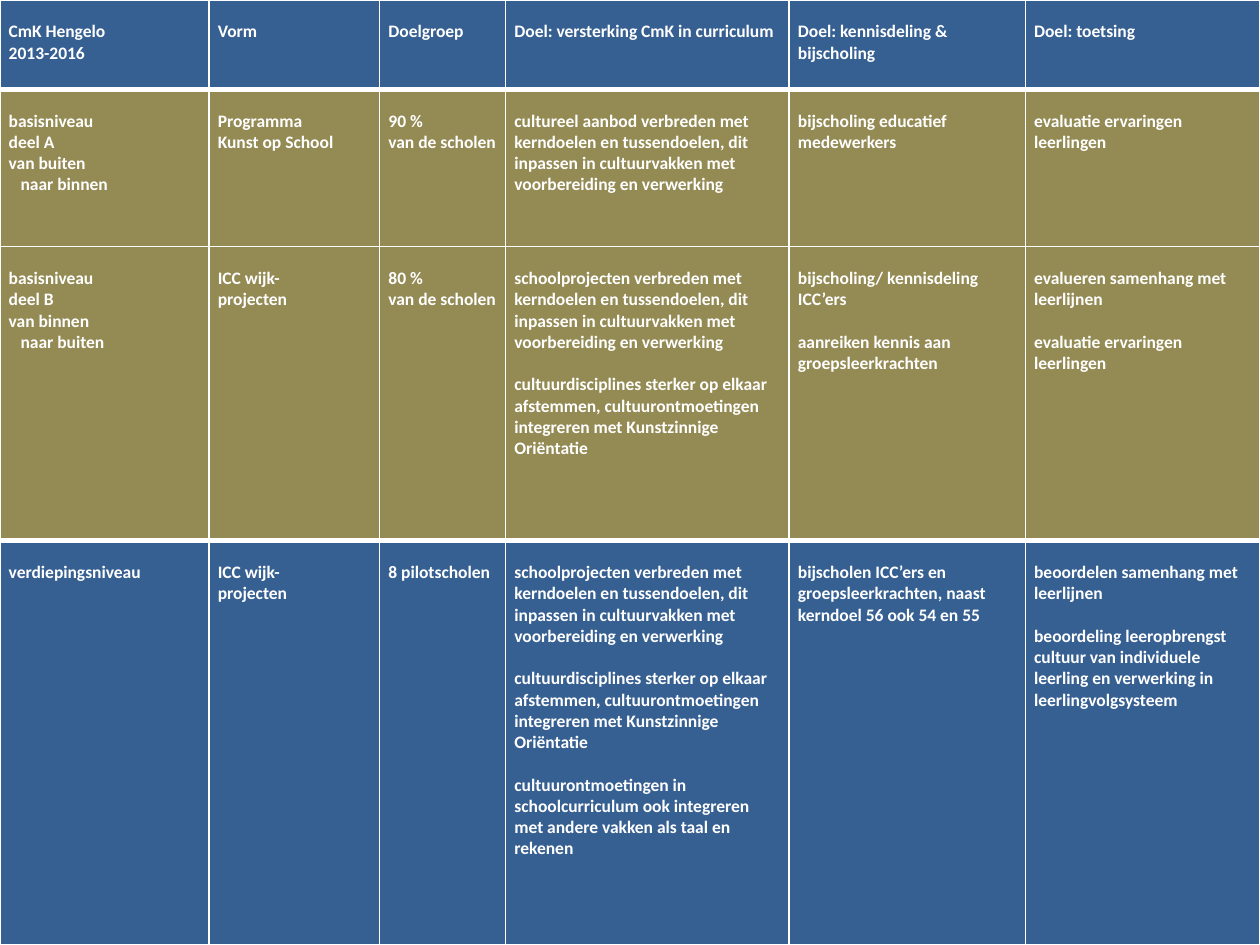
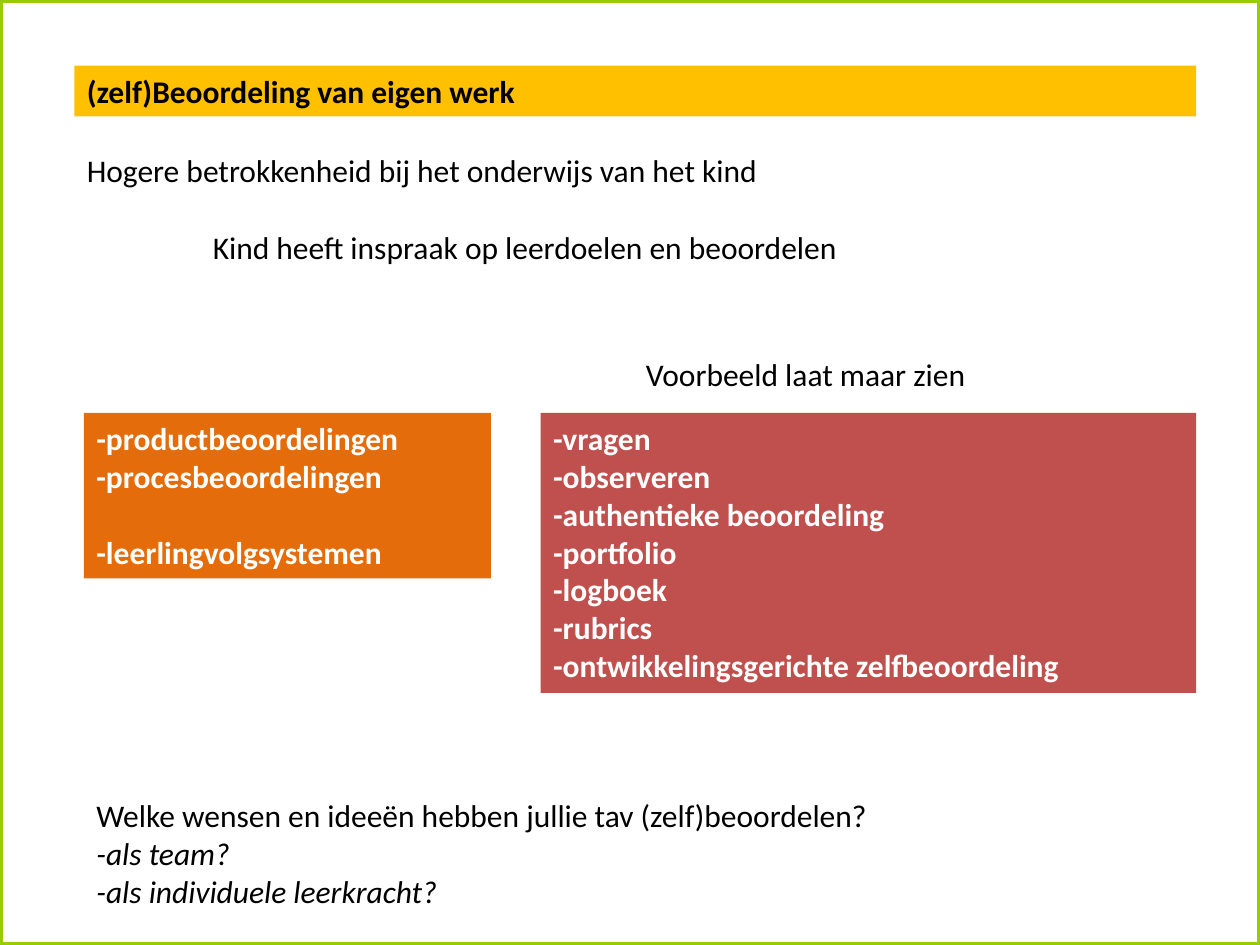
from lxml import etree
from pptx import Presentation
from pptx.dml.color import RGBColor
from pptx.enum import shapes, text
from pptx.oxml import ns
from pptx.util import Pt

FONT = "Calibri"
LINE = 1.22  # line height of the font, relative to its size
COLORS = {
    "white": "FFFFFF", "black": "000000", "blue": "376092", "olive": "948A54",
    "green": "99CC00", "yellow": "FFC000", "orange": "E46C0A", "red": "C0504D",
}


def color(name):
    return RGBColor.from_string(COLORS[name])


def write(tf, lines, size, ink, bold=False):
    """Write one paragraph per line; a line is text or (text, options)."""
    tf.word_wrap = True
    tf.vertical_anchor = text.MSO_ANCHOR.TOP
    for i, line in enumerate(lines):
        words, opts = (line, {}) if isinstance(line, str) else line
        p = tf.paragraphs[0] if i == 0 else tf.add_paragraph()
        p.alignment = text.PP_ALIGN.LEFT
        if "indent" in opts:
            p._p.get_or_add_pPr().set("marL", str(Pt(opts["indent"])))
        if opts.get("gap"):
            p.space_before = Pt(round(size * LINE, 1))
        r = p.add_run()
        r.text = words
        r.font.name, r.font.size = FONT, Pt(size)
        r.font.bold, r.font.italic = bold, opts.get("italic", False)
        r.font.color.rgb = color(ink)


prs = Presentation()
prs.slide_width, prs.slide_height = Pt(720), Pt(540)
blank = prs.slide_layouts[6]

# Slide 1: programme table
s = prs.slides.add_slide(blank)
GAP = {"gap": True}
INDENT = {"indent": 6.8}
projects = ["ICC wijk-", "projecten"]
embed = ("verbreden met kerndoelen en tussendoelen, dit inpassen in "
         "cultuurvakken met voorbereiding en verwerking")
school_goals = [
    "schoolprojecten " + embed,
    ("cultuurdisciplines sterker op elkaar afstemmen, cultuurontmoetingen "
     "integreren met Kunstzinnige Oriëntatie", GAP),
]
rows = [
    [["CmK Hengelo", "2013-2016"], ["Vorm"], ["Doelgroep"],
     ["Doel: versterking CmK in curriculum"],
     ["Doel: kennisdeling & bijscholing"], ["Doel: toetsing"]],
    [["basisniveau", "deel A", "van buiten", ("naar binnen", INDENT)],
     ["Programma", "Kunst op School"], ["90 %", "van de scholen"],
     ["cultureel aanbod " + embed],
     ["bijscholing educatief medewerkers"],
     ["evaluatie ervaringen leerlingen"]],
    [["basisniveau", "deel B", "van binnen", ("naar buiten", INDENT)],
     projects, ["80 %", "van de scholen"], school_goals,
     ["bijscholing/ kennisdeling ICC’ers",
      ("aanreiken kennis aan groepsleerkrachten", GAP)],
     ["evalueren samenhang met leerlijnen",
      ("evaluatie ervaringen leerlingen", GAP)]],
    [["verdiepingsniveau"], projects, ["8 pilotscholen"],
     school_goals + [("cultuurontmoetingen in schoolcurriculum ook integreren "
                      "met andere vakken als taal en rekenen", GAP)],
     ["bijscholen ICC’ers en groepsleerkrachten, naast kerndoel 56 ook 54 en 55"],
     ["beoordelen samenhang met leerlijnen",
      ("beoordeling leeropbrengst cultuur van individuele leerling en "
       "verwerking in leerlingvolgsysteem", GAP)]],
]
col_widths = [119.5, 97.5, 72, 162, 135, 134]
row_heights = [51, 90, 168, 231]
row_fills = ["blue", "olive", "olive", "blue"]
edge_widths = [1, 3, 1, 3, 1]  # horizontal rules, top to bottom

table = s.shapes.add_table(len(rows), len(col_widths), 0, 0, Pt(720), Pt(540)).table
table.first_row = table.horz_banding = False
for col, width in zip(table.columns, col_widths):
    col.width = Pt(width)
for i, row in enumerate(rows):
    table.rows[i].height = Pt(row_heights[i])
    for j, lines in enumerate(row):
        cell = table.cell(i, j)
        cell.margin_left = cell.margin_right = Pt(5)
        cell.margin_top, cell.margin_bottom = Pt(12.2), 0
        cell.fill.solid()
        cell.fill.fore_color.rgb = color(row_fills[i])
        write(cell.text_frame, lines, 10, "white", bold=True)
        # Cell borders come before the fill
        tcPr = cell._tc.get_or_add_tcPr()
        borders = [("L", 1), ("R", 1), ("T", edge_widths[i]), ("B", edge_widths[i + 1])]
        for k, (side, width) in enumerate(borders):
            ln = etree.Element(ns.qn("a:ln" + side), w=str(Pt(width)))
            fill = etree.SubElement(ln, ns.qn("a:solidFill"))
            etree.SubElement(fill, ns.qn("a:srgbClr"), val=COLORS["white"])
            tcPr.insert(k, ln)

# Slide 2: frame around the slide
s = prs.slides.add_slide(blank)
frame = s.shapes.add_shape(shapes.MSO_SHAPE.RECTANGLE, 0, 0, Pt(720), Pt(540))
frame.shadow.inherit = False
frame.fill.solid()
frame.fill.fore_color.rgb = color("white")
frame.line.color.rgb = color("green")
frame.line.width = Pt(3)

# Coloured panels: left, top, width, height, fill, ink, lines
panels = [
    (42.5, 37.5, 641, 29, "yellow", "black", ["(zelf)Beoordeling van eigen werk"]),
    (48, 236, 232.5, 94.5, "orange", "white",
     ["-productbeoordelingen", "-procesbeoordelingen", ("-leerlingvolgsystemen", GAP)]),
    (309, 236, 374.5, 160, "red", "white",
     ["-vragen", "-observeren", "-authentieke beoordeling", "-portfolio",
      "-logboek", "-rubrics", "-ontwikkelingsgerichte zelfbeoordeling"]),
]
for x, y, w, h, fill, ink, lines in panels:
    sp = s.shapes.add_shape(shapes.MSO_SHAPE.RECTANGLE, Pt(x), Pt(y), Pt(w), Pt(h))
    sp.shadow.inherit = False
    sp.fill.solid()
    sp.fill.fore_color.rgb = color(fill)
    sp.line.fill.background()
    write(sp.text_frame, lines, 18, ink, bold=True)

# Plain texts: left, top, width, height, lines
ITALIC = {"italic": True}
notes = [
    (42.5, 83, 544.5, 116.5,
     ["Hogere betrokkenheid bij het onderwijs van het kind",
      ("Kind heeft inspraak op leerdoelen en beoordelen", {"gap": True, "indent": 72})]),
    (48, 451.5, 635, 72.5,
     ["Welke wensen en ideeën hebben jullie tav (zelf)beoordelen?",
      ("-als team?", ITALIC), ("-als individuele leerkracht?", ITALIC)]),
    (362, 199.5, 230.5, 51, ["Voorbeeld laat maar zien"]),
]
for x, y, w, h, lines in notes:
    box = s.shapes.add_textbox(Pt(x), Pt(y), Pt(w), Pt(h))
    write(box.text_frame, lines, 18, "black")

prs.save("out.pptx")
